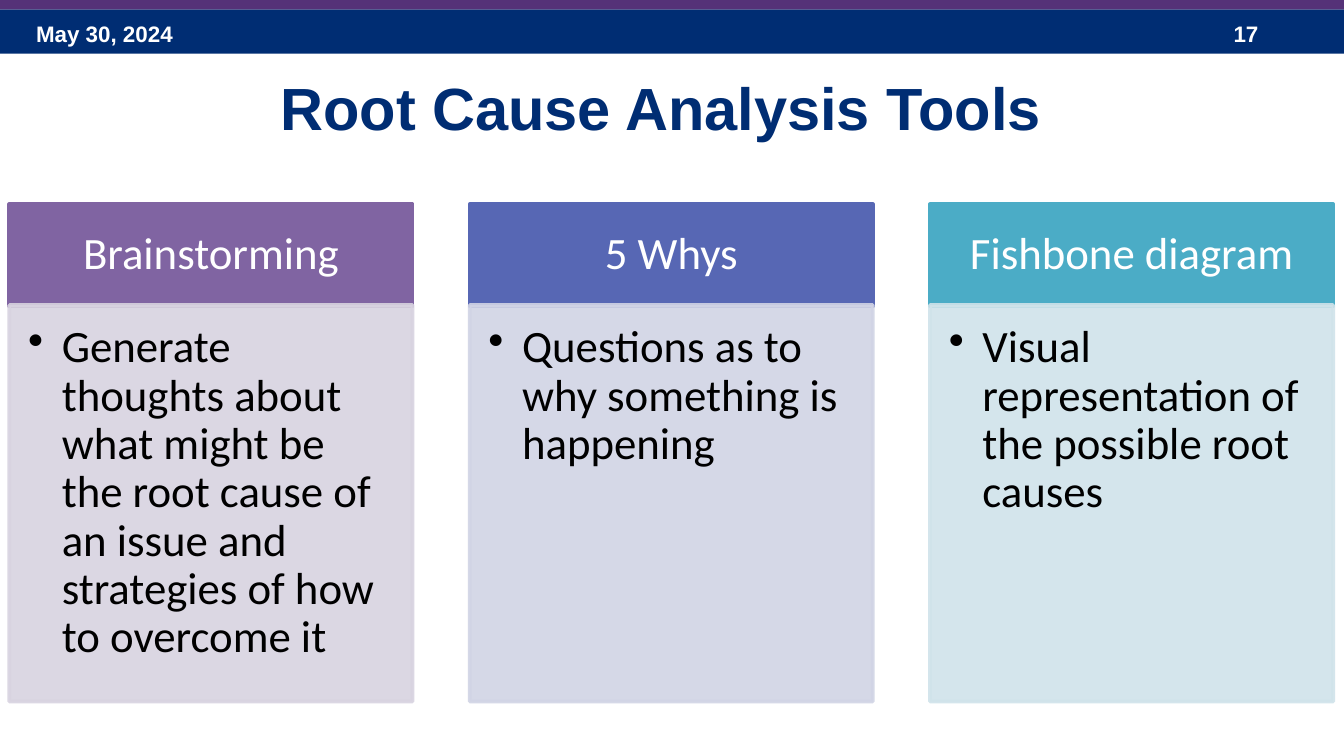
"""Build the Root Cause Analysis Tools slide."""
from dataclasses import dataclass

from lxml import etree
from pptx import Presentation
from pptx.dml.color import RGBColor
from pptx.enum.shapes import MSO_SHAPE
from pptx.enum.text import MSO_ANCHOR, PP_ALIGN
from pptx.oxml.ns import qn
from pptx.shapes.autoshape import Shape
from pptx.slide import Slide
from pptx.util import Inches, Pt

RECTANGLE = MSO_SHAPE.RECTANGLE
TOP, MIDDLE = MSO_ANCHOR.TOP, MSO_ANCHOR.MIDDLE
LEFT, CENTER = PP_ALIGN.LEFT, PP_ALIGN.CENTER

NAVY = RGBColor(0x00, 0x2D, 0x73)
PLUM = RGBColor(0x55, 0x32, 0x78)
WHITE = RGBColor(0xFF, 0xFF, 0xFF)
BLACK = RGBColor(0x00, 0x00, 0x00)

FIRST_LEFT, LAST_LEFT, COLUMN_WIDTH = 0.07, 6.92, 3
HEADING_TOP, HEADING_HEIGHT = 1.52, 0.76
BODY_TOP, BODY_HEIGHT = 2.27, 2.95
HEADING_INSETS = (0.19, 0.11, 0.19, 0.11)
BODY_INSETS = (0.14, 0.14, 0.19, 0.21)
LINE_SPACING = 0.9


@dataclass(frozen=True)
class Area:
    left: float
    top: float
    width: float
    height: float

    def lengths(self) -> tuple[Inches, ...]:
        return tuple(Inches(v) for v in (self.left, self.top, self.width, self.height))


@dataclass(frozen=True)
class TextStyle:
    font: str
    size: float
    color: RGBColor
    bold: bool = False
    align: PP_ALIGN = LEFT
    anchor: MSO_ANCHOR = TOP
    insets: tuple[float, ...] = (0.1, 0.05, 0.1, 0.05)
    spacing: float = 1.0
    bullet: bool = False


@dataclass(frozen=True)
class Tool:
    name: str
    description: str
    color: RGBColor
    tint: RGBColor


BANNER = TextStyle("Arial", 12, WHITE, bold=True)
TITLE = TextStyle("Arial", 31.9, NAVY, bold=True, align=CENTER)
HEADING = TextStyle("Calibri", 24, WHITE, align=CENTER, anchor=MIDDLE,
                    insets=HEADING_INSETS, spacing=LINE_SPACING)
BODY = TextStyle("Calibri", 24, BLACK, insets=BODY_INSETS,
                 spacing=LINE_SPACING, bullet=True)

TOOLS = (
    Tool("Brainstorming",
         "Generate thoughts about what might be the root cause of an issue "
         "and strategies of how to overcome it",
         RGBColor(0x80, 0x64, 0xA2), RGBColor(0xD8, 0xD3, 0xE0)),
    Tool("5 Whys", "Questions as to why something is happening",
         RGBColor(0x57, 0x67, 0xB4), RGBColor(0xD1, 0xD4, 0xE5)),
    Tool("Fishbone diagram", "Visual representation of the possible root causes",
         RGBColor(0x4B, 0xAC, 0xC6), RGBColor(0xD0, 0xE3, 0xEA)),
)


def write_text(shape: Shape, text: str, style: TextStyle) -> None:
    frame = shape.text_frame
    frame.word_wrap = True
    frame.vertical_anchor = style.anchor
    (frame.margin_left, frame.margin_top,
     frame.margin_right, frame.margin_bottom) = map(Inches, style.insets)
    para = frame.paragraphs[0]
    para.alignment = style.align
    para.line_spacing = style.spacing
    if style.bullet:
        properties = para._p.get_or_add_pPr()
        properties.set("marL", str(Inches(0.25)))
        properties.set("indent", str(Inches(-0.25)))
        etree.SubElement(properties, qn("a:buChar")).set("char", "•")
        para.font.name = style.font
        para.font.size = Pt(style.size)
    span = para.add_run()
    span.text = text
    span.font.name = style.font
    span.font.size = Pt(style.size)
    span.font.bold = style.bold
    span.font.color.rgb = style.color


def add_text(page: Slide, area: Area, text: str, style: TextStyle) -> None:
    write_text(page.shapes.add_textbox(*area.lengths()), text, style)


def add_panel(page: Slide, area: Area, color: RGBColor,
              outlined: bool = False, opacity: int = 100) -> Shape:
    panel = page.shapes.add_shape(RECTANGLE, *area.lengths())
    panel.shadow.inherit = False
    panel.fill.solid()
    panel.fill.fore_color.rgb = color
    if outlined:
        panel.line.width = Pt(2)
        panel.line.color.rgb = color
    else:
        panel.line.fill.background()
    if opacity < 100:
        for tone in panel._element.spPr.iter(qn("a:srgbClr")):
            etree.SubElement(tone, qn("a:alpha")).set("val", str(opacity * 1000))
    return panel


def add_tool(page: Slide, left: float, tool: Tool) -> None:
    heading_area = Area(left, HEADING_TOP, COLUMN_WIDTH, HEADING_HEIGHT)
    heading = add_panel(page, heading_area, tool.color, outlined=True)
    write_text(heading, tool.name, HEADING)
    body_area = Area(left, BODY_TOP, COLUMN_WIDTH, BODY_HEIGHT)
    body = add_panel(page, body_area, tool.tint, outlined=True, opacity=90)
    write_text(body, tool.description, BODY)


def main() -> None:
    deck = Presentation()
    deck.slide_width = Inches(10)
    deck.slide_height = deck.slide_width * 9 // 16
    page = deck.slides.add_slide(deck.slide_layouts[6])
    add_panel(page, Area(0, 0.07, 10, 0.33), NAVY)
    add_text(page, Area(0.17, 0.1, 2.33, 0.3), "May 30, 2024", BANNER)
    add_text(page, Area(9.08, 0.1, 0.75, 0.3), "17", BANNER)
    add_panel(page, Area(0, -0.02, 10, 0.09), PLUM)
    add_text(page, Area(0.17, 0.48, 9.5, 0.7), "Root Cause Analysis Tools", TITLE)
    column_step = (LAST_LEFT - FIRST_LEFT) / (len(TOOLS) - 1)
    for column, tool in enumerate(TOOLS):
        add_tool(page, FIRST_LEFT + column * column_step, tool)
    deck.save("out.pptx")


if __name__ == "__main__":
    main()
